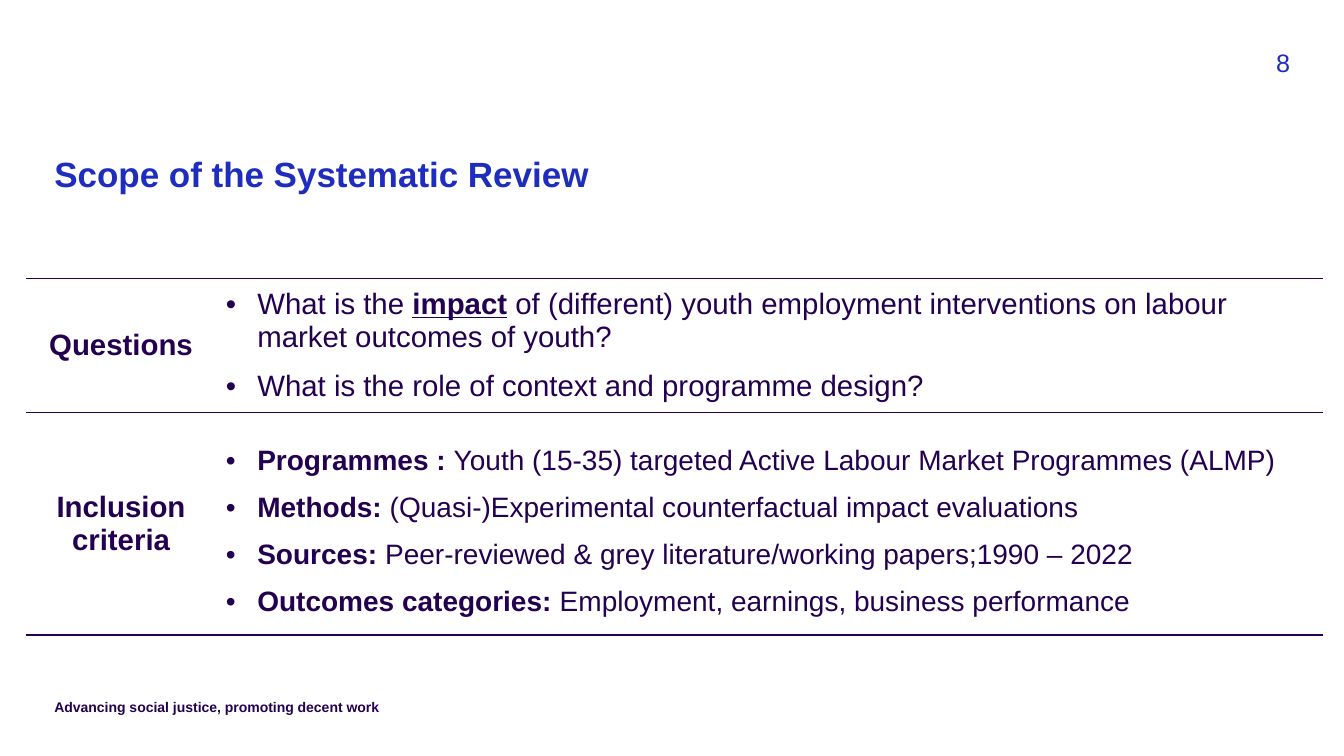
from lxml import etree
from pptx import Presentation
from pptx.dml.color import RGBColor
from pptx.enum import text
from pptx.oxml import ns
from pptx.util import Cm, Pt

COLORS = {"blue": "1E2DBE", "purple": "230050"}
FONT = "Arial"

TITLE = "Scope of the Systematic Review"
FOOTER = "Advancing social justice, promoting decent work"
PAGE = "8"

# Each point: (line spacing, [(words, style), ...])
BOLD, PLAIN = {"bold": True}, {"bold": False}
KEYWORD = {"bold": True, "underline": True}
SCOPE = [
    ("Questions", 21, [
        (1.0, [("What is the ", PLAIN), ("impact", KEYWORD),
               (" of (different) youth employment interventions on labour "
                "market outcomes of youth?", PLAIN)]),
        (1.5, [("What is the role of context and programme design?", PLAIN)]),
    ]),
    ("Inclusion\ncriteria", 20, [
        (1.5, [("Programmes : ", BOLD),
               ("Youth (15-35) targeted Active Labour Market Programmes (ALMP)", PLAIN)]),
        (1.5, [("Methods:", BOLD),
               (" (Quasi-)Experimental counterfactual impact evaluations", PLAIN)]),
        (1.5, [("Sources: ", BOLD),
               ("Peer-reviewed & grey literature/working papers;1990 – 2022", PLAIN)]),
        (1.5, [("Outcomes categories: ", BOLD),
               ("Employment, earnings, business performance", PLAIN)]),
    ]),
]
LABEL_SIZE = 21
COLUMN_WIDTHS = [4.78, 27.91]
ROW_HEIGHTS = [3.38, 5.61]
TABLE_LEFT, TABLE_TOP = 0.66, 7.01
BULLET_INDENT = 0.79


def style(font, size, color, **values):
    font.color.rgb = RGBColor.from_string(COLORS[color])
    for name, value in {"name": FONT, "size": Pt(size), **values}.items():
        setattr(font, name, value)


def set_line(shape, words, align, size, color, bold):
    """Write one line of text into a frame without margins."""
    frame = shape.text_frame
    for name, value in {"margin_left": 0, "margin_right": 0, "margin_top": 0,
                        "margin_bottom": 0, "word_wrap": True,
                        "vertical_anchor": text.MSO_ANCHOR.TOP}.items():
        setattr(frame, name, value)
    frame.text = words
    line = frame.paragraphs[0]
    line.alignment = align
    style(line.runs[0].font, size, color, bold=bold)
    return line


def rule_cell(cell):
    """Draw rules above and below only, with no fill."""
    properties = cell._tc.get_or_add_tcPr()
    for side in ("lnL", "lnR", "lnT", "lnB"):
        border = etree.SubElement(properties, ns.qn(f"a:{side}"), w=str(Pt(1)))
        if side in ("lnL", "lnR"):
            etree.SubElement(border, ns.qn("a:noFill"))
        else:
            fill = etree.SubElement(border, ns.qn("a:solidFill"))
            etree.SubElement(fill, ns.qn("a:srgbClr"), val=COLORS["purple"])
    cell.fill.background()


def add_bullet(paragraph):
    properties = paragraph._p.get_or_add_pPr()
    properties.set("marL", str(Cm(BULLET_INDENT)))
    properties.set("indent", str(-Cm(BULLET_INDENT)))
    etree.SubElement(properties, ns.qn("a:buFont"), typeface=FONT)
    etree.SubElement(properties, ns.qn("a:buChar"), char="•")


def fill_points(cell, points, size):
    frame = cell.text_frame
    for index, (spacing, pieces) in enumerate(points):
        point = frame.add_paragraph() if index else frame.paragraphs[0]
        add_bullet(point)
        point.line_spacing = spacing
        for words, emphasis in pieces:
            run = point.add_run()
            run.text = words
            style(run.font, size, "purple", **emphasis)


def fill_label(cell, label):
    cell.text = label
    for line in cell.text_frame.paragraphs:
        line.alignment = text.PP_ALIGN.CENTER
        style(line.runs[0].font, LABEL_SIZE, "purple", bold=True)


def add_scope_table(slide):
    table = slide.shapes.add_table(
        len(SCOPE), len(COLUMN_WIDTHS), Cm(TABLE_LEFT), Cm(TABLE_TOP),
        Cm(sum(COLUMN_WIDTHS)), Cm(sum(ROW_HEIGHTS))).table
    table.first_row = table.horz_banding = False
    for column, width in zip(table.columns, COLUMN_WIDTHS):
        column.width = Cm(width)
    for row, height, (label, size, points) in zip(table.rows, ROW_HEIGHTS, SCOPE):
        row.height = Cm(height)
        for cell in row.cells:
            cell.vertical_anchor = text.MSO_ANCHOR.MIDDLE
            rule_cell(cell)
        fill_label(row.cells[0], label)
        fill_points(row.cells[1], points, size)


def main():
    deck = Presentation()
    deck.slide_width, deck.slide_height = Cm(33.87), Cm(19.05)
    slide = deck.slides.add_slide(deck.slide_layouts[5])

    title = slide.shapes.title
    title.left, title.top, title.width, title.height = Cm(1.37), Cm(3.96), Cm(31.14), Cm(2)
    heading = set_line(title, TITLE, text.PP_ALIGN.LEFT, 25, "blue", True)
    heading.line_spacing = 0.9

    footer = slide.shapes.add_textbox(Cm(1.37), Cm(17.6), Cm(15.57), Cm(0.5))
    set_line(footer, FOOTER, text.PP_ALIGN.LEFT, 10, "purple", True)
    page = slide.shapes.add_textbox(Cm(31.01), Cm(1.2), Cm(1.5), Cm(0.8))
    set_line(page, PAGE, text.PP_ALIGN.RIGHT, 18, "blue", False)

    add_scope_table(slide)
    deck.save("out.pptx")


if __name__ == "__main__":
    main()
